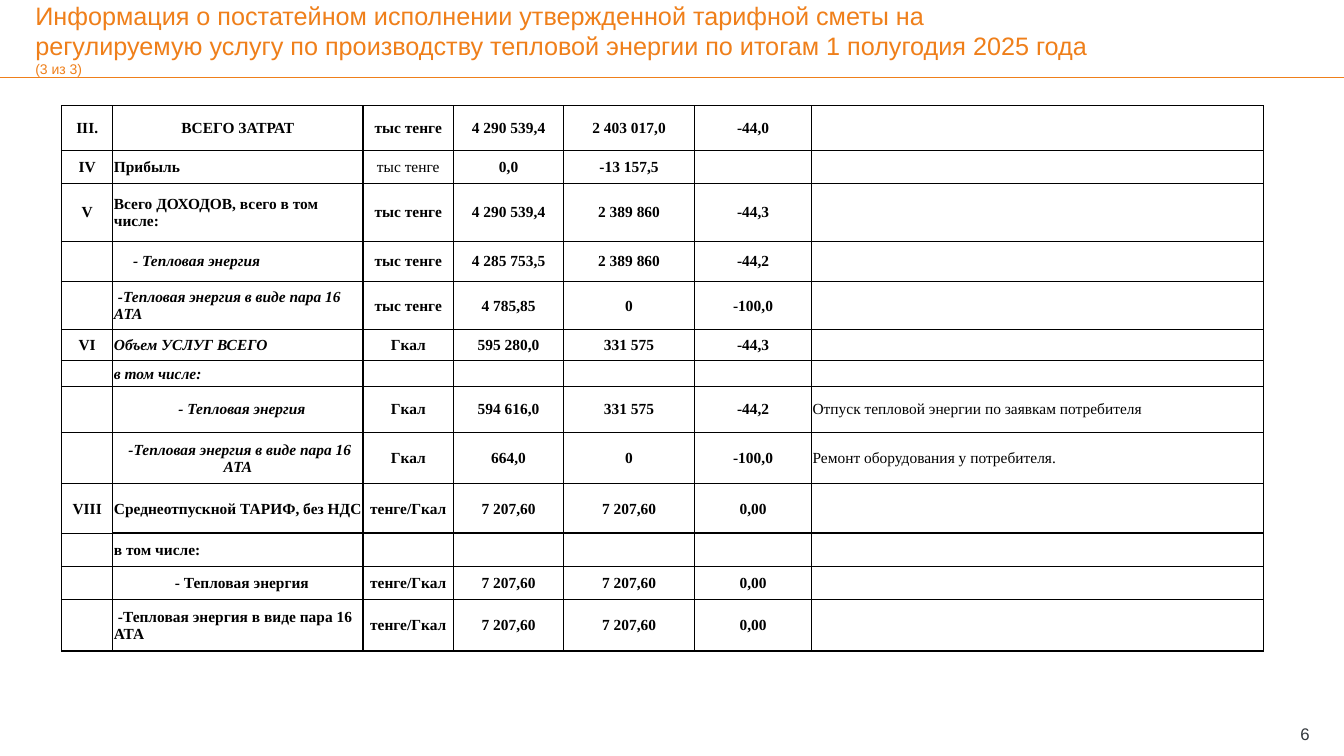
from lxml import etree
from pptx import Presentation
from pptx.dml.color import RGBColor
from pptx.enum.shapes import MSO_CONNECTOR
from pptx.enum.text import MSO_ANCHOR, PP_ALIGN
from pptx.oxml.ns import qn
from pptx.util import Inches, Pt

LEFT, MID, RIGHT = PP_ALIGN.LEFT, PP_ALIGN.CENTER, PP_ALIGN.RIGHT
CENTER = MSO_ANCHOR.MIDDLE
LINE = MSO_CONNECTOR.STRAIGHT

COLORS = {"accent": "EF7F1A", "ink": "000000", "page": "32373C", "paper": "FFFFFF"}
SANS, SERIF = "Arial", "Times New Roman"
WIDE, HIGH = 13.33, 7.5
HEAD = 0.77

TITLE = [
    ("Информация о постатейном исполнении утвержденной тарифной сметы на регулируемую "
     "услугу по производству тепловой энергии по итогам 1 полугодия 2025 года ", 18),
    ("(3 из 3)", 10),
]
PAGE = "6"

COLS = [0.51, 2.48, 0.9, 1.09, 1.3, 1.16, 4.48]
HEIGHTS = [0.44, 0.33, 0.57, 0.4, 0.48, 0.31, 0.25, 0.46, 0.51, 0.49, 0.33, 0.33, 0.51]
HEAT, STEAM = "- Тепловая энергия", "-Тепловая энергия в виде пара 16 АТА"
KT, GC, TG = "тыс тенге", "Гкал", "тенге/Гкал"
RATE = (TG, "7 207,60", "7 207,60", "0,00", "")
NONE = ("",) * 5
ROWS = [
    ("III.", "ВСЕГО ЗАТРАТ", KT, "4 290 539,4", "2 403 017,0", "-44,0", ""),
    ("IV", "Прибыль", KT, "0,0", "-13 157,5", "", ""),
    ("V", "Всего ДОХОДОВ, всего в том числе:", KT, "4 290 539,4", "2 389 860", "-44,3", ""),
    ("", HEAT, KT, "4 285 753,5", "2 389 860", "-44,2", ""),
    ("", STEAM, KT, "4 785,85", "0", "-100,0", ""),
    ("VI", "Объем УСЛУГ ВСЕГО", GC, "595 280,0", "331 575", "-44,3", ""),
    ("", "в том числе:") + NONE,
    ("", HEAT, GC, "594 616,0", "331 575", "-44,2",
     "Отпуск тепловой энергии по заявкам потребителя"),
    ("", STEAM, GC, "664,0", "0", "-100,0", "Ремонт оборудования у потребителя."),
    ("VIII", "Среднеотпускной ТАРИФ, без НДС") + RATE,
    ("", "в том числе:") + NONE,
    ("", HEAT) + RATE,
    ("", STEAM) + RATE,
]
NAME, NOTE = 1, 6
MIDDLE = {0, 7, 8, 11}
ITALIC = range(3, 9)
INDENT = {3: 0.19, 4: 0.04, 7: 0.08, 8: 0.04, 11: 0.08, 12: 0.04}
PLAIN = (1, 2)


def tint(name):
    return RGBColor.from_string(COLORS[name])


def style(font, face, size, color):
    font.name, font.size = face, Pt(size)
    font.color.rgb = tint(color)


def add_text(slide, box, runs, face, color, align):
    frame = slide.shapes.add_textbox(*map(Inches, box)).text_frame
    frame.word_wrap = True
    frame.vertical_anchor = CENTER
    frame.margin_left = frame.margin_right = frame.margin_top = frame.margin_bottom = 0
    par = frame.paragraphs[0]
    par.alignment = align
    for text, size in runs:
        run = par.add_run()
        run.text = text
        style(run.font, face, size, color)


def add_edges(cell, row, col):
    def across(edge):
        return 0.5 if 2 <= edge <= 7 or (col == 0 and edge in (8, 9)) else 1

    def down(edge):
        return 0.5 if edge == 4 else 1

    sides = [("L", down(col - 1)), ("R", down(col)), ("T", across(row - 1)), ("B", across(row))]
    props = cell._tc.get_or_add_tcPr()
    for spot, (side, width) in enumerate(sides):
        line = etree.Element(qn("a:ln" + side), w=str(Pt(width)))
        fill = etree.SubElement(line, qn("a:solidFill"))
        etree.SubElement(fill, qn("a:srgbClr"), val=COLORS["ink"])
        props.insert(spot, line)


def fill_cell(cell, text, row, col):
    cell.fill.solid()
    cell.fill.fore_color.rgb = tint("paper")
    cell.vertical_anchor = CENTER
    cell.margin_left = cell.margin_right = cell.margin_top = Inches(0.01)
    cell.margin_bottom = 0
    add_edges(cell, row, col)
    cell.text = text
    par = cell.text_frame.paragraphs[0]
    left = col == NOTE or (col == NAME and row not in MIDDLE)
    par.alignment = LEFT if left else MID
    if col == NAME and row in INDENT:
        props = par._p.get_or_add_pPr()
        props.set("marL", "0")
        props.set("indent", str(Inches(INDENT[row])))
    style(par.font, SERIF, 11, "ink")
    par.font.bold = col != NOTE and (row, col) != PLAIN
    par.font.italic = col == NAME and row in ITALIC
    if not text:
        etree.SubElement(par._p, qn("a:endParaRPr"), sz="1100")


def add_grid(slide):
    box = (0.61, 1.05, sum(COLS), sum(HEIGHTS))
    table = slide.shapes.add_table(len(ROWS), len(COLS), *map(Inches, box)).table
    table.first_row = table.horz_banding = False
    for col, width in enumerate(COLS):
        table.columns[col].width = Inches(width)
    for row, texts in enumerate(ROWS):
        table.rows[row].height = Inches(HEIGHTS[row])
        for col, text in enumerate(texts):
            fill_cell(table.cell(row, col), text, row, col)


def main():
    deck = Presentation()
    deck.slide_width, deck.slide_height = Inches(WIDE), Inches(HIGH)
    slide = deck.slides.add_slide(deck.slide_layouts[6])
    add_text(slide, (12.49, 7.15, 0.5, 0.25), [(PAGE, 12)], SANS, "page", RIGHT)
    rule = slide.shapes.add_connector(LINE, 0, Inches(HEAD), Inches(WIDE), Inches(HEAD))
    rule.line.color.rgb = tint("accent")
    rule.line.width = Pt(0.75)
    etree.SubElement(rule._element.spPr, qn("a:effectLst"))
    add_text(slide, (0.35, 0, 10.51, HEAD), TITLE, SANS, "accent", LEFT)
    add_grid(slide)
    deck.save("out.pptx")


if __name__ == "__main__":
    main()
